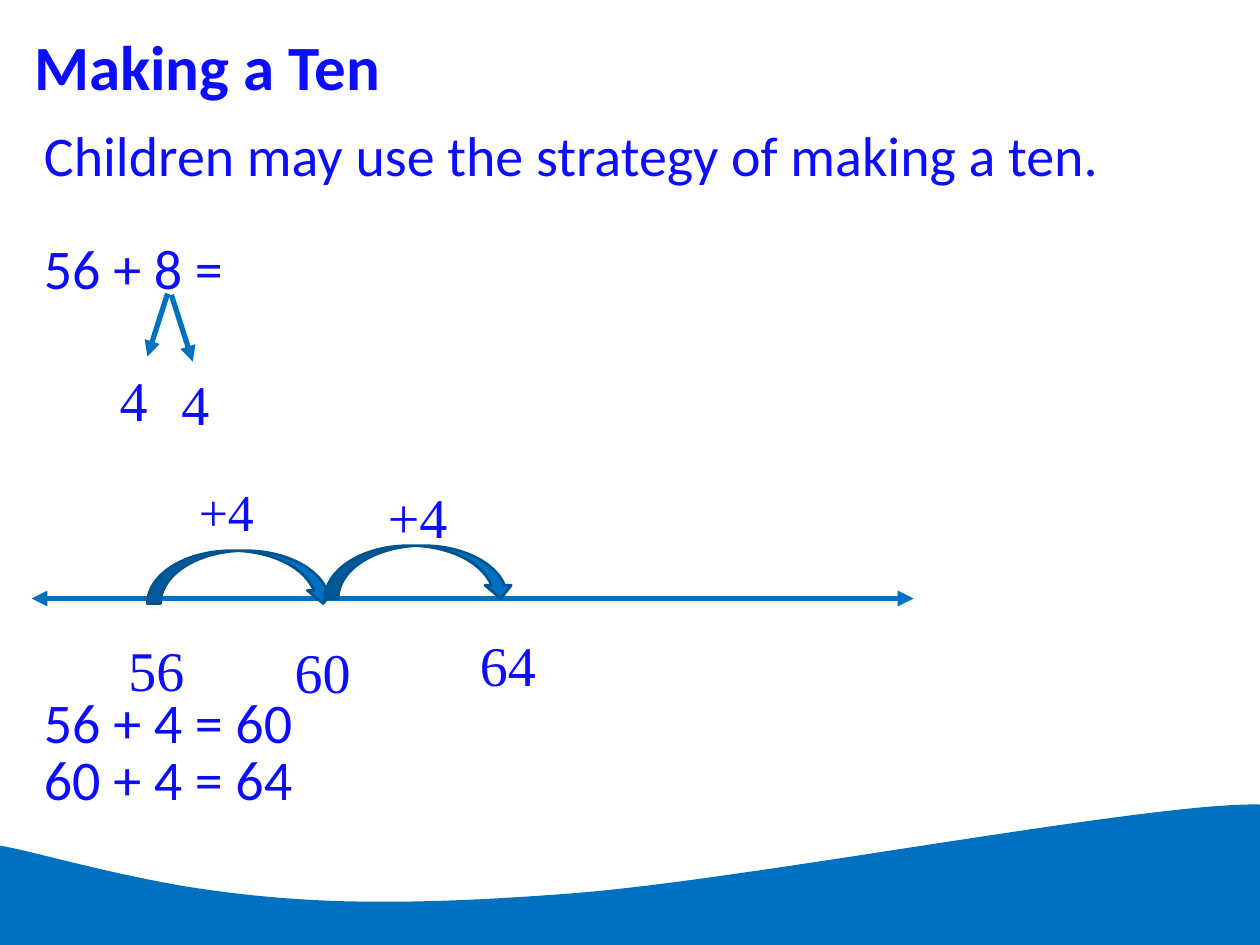
from lxml.etree import SubElement
from pptx import Presentation
from pptx.dml.color import RGBColor
from pptx.enum.shapes import MSO_CONNECTOR, MSO_SHAPE
from pptx.enum.text import MSO_ANCHOR, PP_ALIGN
from pptx.oxml.ns import qn
from pptx.util import Inches, Pt

COLORS = {"text": "0C0CFF", "shape": "0070C0", "outline": "00538E"}


def bezier(p0, p1, p2, p3, steps=40):
    for i in range(1, steps + 1):
        t = i / steps
        u = 1 - t
        yield tuple(
            u**3 * a + 3 * u**2 * t * b + 3 * u * t**2 * c + t**3 * d
            for a, b, c, d in zip(p0, p1, p2, p3)
        )


class SlideBuilder:
    body_font = "Calibri"
    label_font = "Times New Roman"

    def __init__(self, prs):
        self.slide = prs.slides.add_slide(prs.slide_layouts[5])
        self.shapes = self.slide.shapes

    def color(self, name):
        return RGBColor.from_string(COLORS[name])

    def style(self, p, font, size, bold=False):
        p.alignment = PP_ALIGN.LEFT
        for r in p.runs:
            r.font.name = font
            r.font.size = Pt(size)
            r.font.bold = bold
            r.font.color.rgb = self.color("text")

    def paint(self, sp, line=None):
        sp.shadow.inherit = False
        sp.fill.solid()
        sp.fill.fore_color.rgb = self.color("shape")
        if line:
            sp.line.color.rgb = self.color(line)
            sp.line.width = Pt(1.5)
        else:
            sp.line.fill.background()

    def wave(self, start, curves, corners):
        points = [start]
        for curve in curves:
            points.extend(bezier(points[-1], *curve))
        points.extend(corners)
        x, y = points[0]
        builder = self.shapes.build_freeform(Inches(x), Inches(y))
        builder.add_line_segments([(Inches(x), Inches(y)) for x, y in points[1:]])
        self.paint(builder.convert_to_shape())

    def title(self, text, left, top, width, height):
        sp = self.shapes.title
        sp.left, sp.top = Inches(left), Inches(top)
        sp.width, sp.height = Inches(width), Inches(height)
        tf = sp.text_frame
        tf.text = text
        tf.vertical_anchor = MSO_ANCHOR.MIDDLE
        self.style(tf.paragraphs[0], self.body_font, 36, bold=True)

    def textbox(self, left, top, width, height):
        sp = self.shapes.add_textbox(
            Inches(left), Inches(top), Inches(width), Inches(height))
        sp.text_frame.word_wrap = True
        return sp.text_frame

    def body(self, lines, left, top, width, height):
        tf = self.textbox(left, top, width, height)
        for i, (text, space) in enumerate(lines):
            p = tf.add_paragraph() if i else tf.paragraphs[0]
            p.text = text
            p.line_spacing = Pt(26)
            p.space_before = Pt(space)
            self.style(p, self.body_font, 32)

    def label(self, text, left, top, width, height, anchor=MSO_ANCHOR.MIDDLE,
              size=32, spacing=None, wrap=True):
        tf = self.textbox(left, top, width, height)
        tf.word_wrap = wrap
        tf.vertical_anchor = anchor
        p = tf.paragraphs[0]
        p.text = text
        p.line_spacing = spacing
        self.style(p, self.label_font, size)

    def arrow(self, x1, y1, x2, y2, ends=("tailEnd",)):
        cxn = self.shapes.add_connector(
            MSO_CONNECTOR.STRAIGHT, Inches(x1), Inches(y1), Inches(x2), Inches(y2))
        cxn.line.color.rgb = self.color("shape")
        cxn.line.width = Pt(3)
        ln = cxn.line._get_or_add_ln()
        for end in ends:
            SubElement(ln, qn(f"a:{end}"), type="triangle")
        SubElement(cxn._element.spPr, qn("a:effectLst"))

    def jump(self, left, top):
        sp = self.shapes.add_shape(
            MSO_SHAPE.CURVED_DOWN_ARROW,
            Inches(left), Inches(top), Inches(1.5), Inches(0.42))
        self.paint(sp, line="outline")


def main():
    prs = Presentation()
    prs.slide_width, prs.slide_height = Inches(10), Inches(7.5)
    s = SlideBuilder(prs)

    s.wave(
        (10.08, 6.39),
        [
            ((9.36, 6.32), (5.98, 6.98), (4.55, 7.09)),
            ((3.12, 7.2), (2.34, 7.17), (1.5, 7.04)),
            ((0.66, 6.9), (-0.08, 6.65), (-0.08, 6.72)),
        ],
        [(-0.08, 7.55), (10.08, 7.55), (10.08, 6.39)],
    )
    s.title("Making a Ten", 0.17, 0.17, 9, 0.7)

    gap, pitch = 6.4, 32.4
    s.body(
        [
            ("Children may use the strategy of making a ten.", 0),
            ("56 + 8 =", gap + pitch),
            ("56 + 4 = 60", gap + 7 * pitch),
            ("60 + 4 = 64", gap),
        ],
        0.25, 1.08, 9.42, 5.62,
    )

    s.arrow(1.33, 2.33, 1.17, 2.83)
    s.arrow(1.36, 2.34, 1.53, 2.87)
    s.arrow(0.25, 4.75, 7.25, 4.75, ends=("headEnd", "tailEnd"))
    s.jump(1.17, 4.37)
    s.jump(2.58, 4.33)

    s.label("4", 0.85, 2.85, 0.58, 0.63)
    s.label("4", 1.34, 2.88, 0.41, 0.64, anchor=MSO_ANCHOR.TOP, wrap=False)
    s.label("56", 0.92, 4.97, 0.75, 0.68)
    s.label("60", 2.24, 5.01, 0.68, 0.63)
    s.label("64", 3.71, 4.96, 0.68, 0.63)
    s.label("+4", 1.48, 3.83, 0.74, 0.54, size=29.6, spacing=0.8)
    s.label("+4", 2.98, 3.78, 0.92, 0.64, anchor=MSO_ANCHOR.TOP)

    prs.save("out.pptx")


if __name__ == "__main__":
    main()
